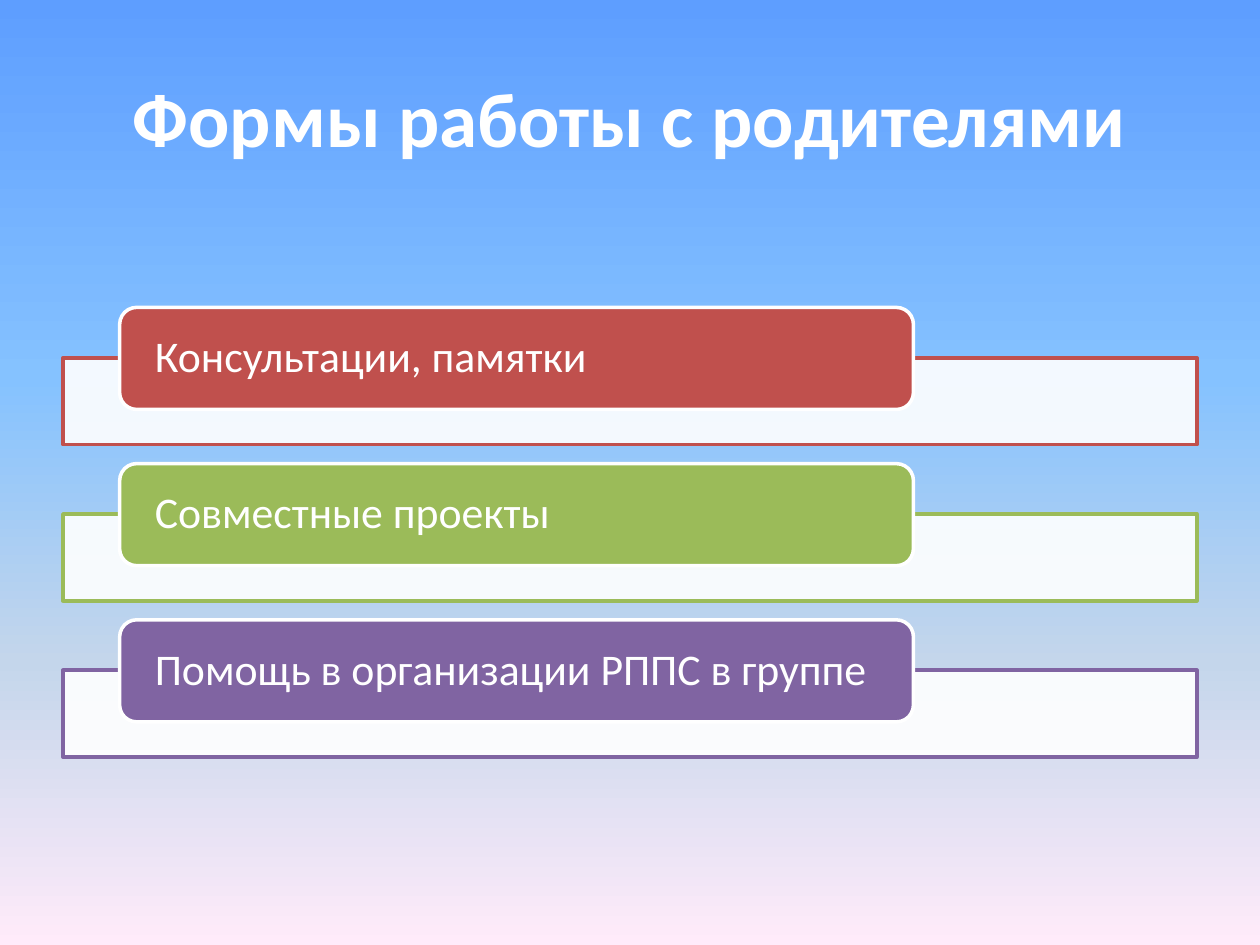
import lxml.etree
import pptx
import pptx.dml.color
import pptx.enum.shapes
import pptx.enum.text
import pptx.oxml.ns
import pptx.util

RGBColor = pptx.dml.color.RGBColor
Shape = pptx.enum.shapes.MSO_SHAPE
Align = pptx.enum.text.PP_ALIGN
qn = pptx.oxml.ns.qn

WHITE = RGBColor(0xFF, 0xFF, 0xFF)
RED = RGBColor(0xC0, 0x50, 0x4D)
GREEN = RGBColor(0x9B, 0xBB, 0x59)
PURPLE = RGBColor(0x80, 0x64, 0xA2)
SKY = [
    (0, RGBColor(0x5E, 0x9E, 0xFF)),
    (40, RGBColor(0x85, 0xC2, 0xFF)),
    (70, RGBColor(0xC4, 0xD6, 0xEB)),
    (100, RGBColor(0xFF, 0xEB, 0xFA)),
]

TITLE = "Формы работы с родителями"
FORMS = [
    ("Консультации, памятки", RED),
    ("Совместные проекты", GREEN),
    ("Помощь в организации РППС в группе", PURPLE),
]
FIRST_TOP, STEP, BAR_DROP = 32.53, 16.53, 5.33


def write_text(shape, text, size, bold=False, align=Align.LEFT, inset=0.1, spacing=1.0):
    """Fill a shape with one formatted paragraph, centred vertically."""
    frame = shape.text_frame
    frame.word_wrap = True
    frame.vertical_anchor = pptx.enum.text.MSO_ANCHOR.MIDDLE
    frame.margin_left = frame.margin_right = pptx.util.Inches(inset)
    frame.margin_top = frame.margin_bottom = 0
    paragraph = frame.paragraphs[0]
    paragraph.alignment = align
    paragraph.line_spacing = spacing
    run = paragraph.add_run()
    run.text = text
    run.font.name = "Calibri"
    run.font.size = pptx.util.Pt(size)
    run.font.bold = bold
    run.font.color.rgb = WHITE


class Deck:
    """Holds the style and the current slide; lengths are percent of its size."""

    def __init__(self):
        self.presentation = pptx.Presentation()
        self.presentation.slide_width = pptx.util.Inches(10)
        self.presentation.slide_height = pptx.util.Inches(7.5)
        self.slide = self.presentation.slides.add_slide(self.presentation.slide_layouts[6])

    def place(self, left, top, width, height):
        """Turn percentages into slide lengths."""
        across = self.presentation.slide_width / 100
        down = self.presentation.slide_height / 100
        return [round(n) for n in (left * across, top * down, width * across, height * down)]

    def background(self, stops):
        """Paint a gradient running from top to bottom."""
        fill = self.slide.background.fill
        fill.gradient()
        fill.gradient_angle = 270
        stop_list = next(self.slide.element.iter(qn("a:gsLst")))
        for old_stop in list(stop_list):
            stop_list.remove(old_stop)
        for position, color in stops:
            stop = lxml.etree.SubElement(stop_list, qn("a:gs"), pos=str(position * 1000))
            lxml.etree.SubElement(stop, qn("a:srgbClr"), val=str(color))

    def title(self, text, *box):
        """Add the slide heading."""
        shape = self.slide.shapes.add_textbox(*self.place(*box))
        write_text(shape, text, 44, bold=True, align=Align.CENTER)

    def panel(self, kind, fill, line, *box, opacity=100):
        """Add an outlined shape and return it."""
        shape = self.slide.shapes.add_shape(kind, *self.place(*box))
        shape.shadow.inherit = False
        shape.fill.solid()
        shape.fill.fore_color.rgb = fill
        shape.line.color.rgb = line
        shape.line.width = pptx.util.Pt(2)
        if opacity < 100:
            color = shape.element.spPr.find(qn("a:solidFill"))[0]
            lxml.etree.SubElement(color, qn("a:alpha"), val=str(opacity * 1000))
        return shape

    def list_item(self, text, color, top):
        """Add a wide bar with a rounded label over its upper edge."""
        self.panel(Shape.RECTANGLE, WHITE, color, 5, top + BAR_DROP, 90, 9.2, opacity=90)
        label = self.panel(Shape.ROUNDED_RECTANGLE, color, WHITE, 9.5, top, 63, 10.8)
        write_text(label, text, 25, inset=0.24, spacing=0.9)


def main():
    """Build the slide and save it."""
    deck = Deck()
    deck.background(SKY)
    deck.title(TITLE, 5, 4, 90, 16.67)
    for index, (text, color) in enumerate(FORMS):
        deck.list_item(text, color, FIRST_TOP + index * STEP)
    deck.presentation.save("out.pptx")


if __name__ == "__main__":
    main()
